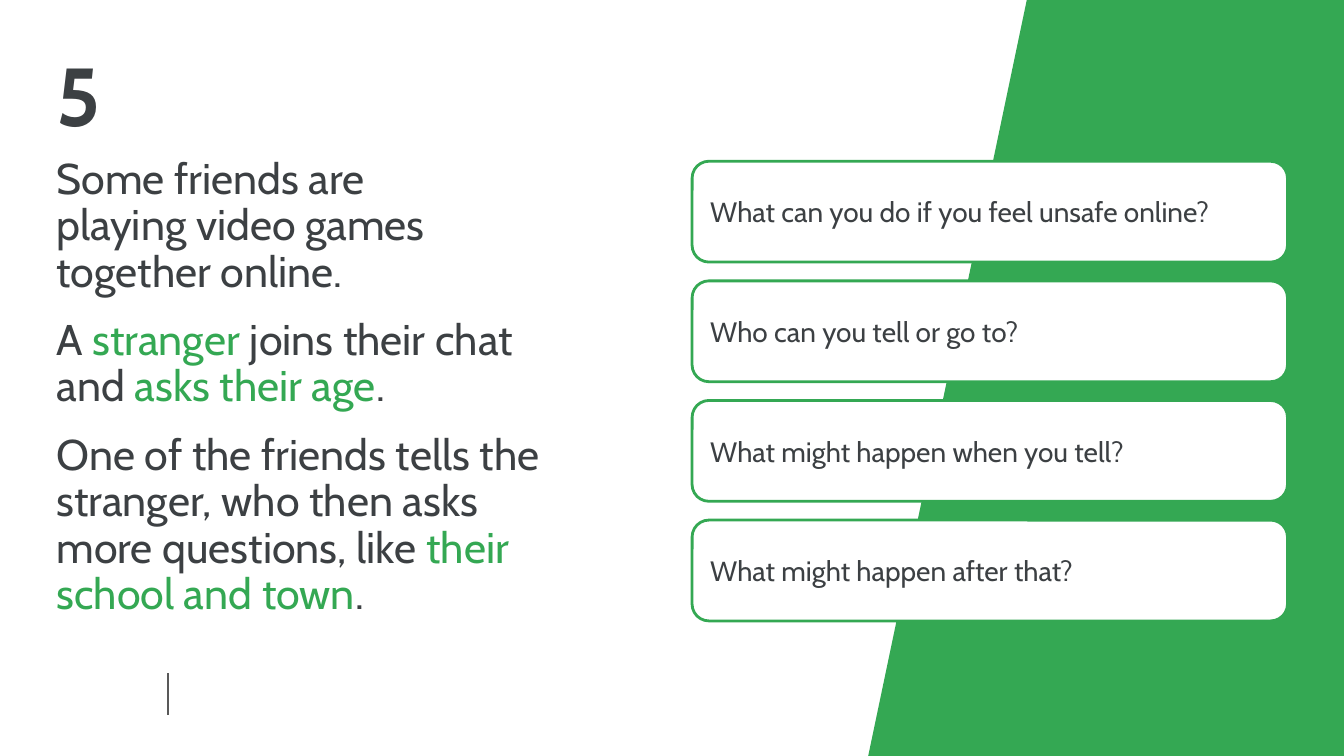
"""Builds a discussion slide: an online safety story beside four question cards."""
import pptx
import pptx.dml.color
import pptx.enum.shapes
import pptx.enum.text
import pptx.oxml
import pptx.oxml.ns
import pptx.util

Inches = pptx.util.Inches
Pt = pptx.util.Pt
RGBColor = pptx.dml.color.RGBColor

WIDTH = 10
HEIGHT = WIDTH * 9 / 16
LEFT = 0.42
CARD_LEFT, CARD_TOP, CARD_WIDTH, CARD_HEIGHT = 5.15, 1.2, 4.43, 0.75
CARD_PITCH = 0.89

FONT = "Cabin"
GREEN = RGBColor(0x34, 0xA8, 0x53)
INK = RGBColor(0x3C, 0x40, 0x43)
GREY = RGBColor(0x59, 0x59, 0x59)
WHITE = RGBColor(0xFF, 0xFF, 0xFF)

QUESTIONS = [
    "What can you do if you feel unsafe online?",
    "Who can you tell or go to?",
    "What might happen when you tell?",
    "What might happen after that?",
]
OPENING = [[("Some friends are \vplaying video games together online.", INK)]]
STORY = [
    [("A ", INK), ("stranger", GREEN), (" joins their chat and ", INK),
     ("asks their age", GREEN), (".", INK)],
    [("One of the friends tells the stranger, who then asks more questions, like ", INK),
     ("their school and town", GREEN), (".", INK)],
]


def add_run(p, text, size, color=INK, bold=False):
    """Add text to a paragraph, with a line break at each vertical tab."""
    for i, part in enumerate(text.split("\v")):
        if i:
            p.add_line_break()
        r = p.add_run()
        r.text = part
        r.font.name = FONT
        r.font.size = Pt(size)
        r.font.bold = bold
        r.font.color.rgb = color


def set_frame(tf, margin, anchor):
    """Wrap a text frame and set its margins and anchor."""
    tf.word_wrap = True
    tf.vertical_anchor = anchor
    tf.margin_left = tf.margin_right = Inches(margin)
    tf.margin_top = tf.margin_bottom = Inches(margin)


def add_text(s, top, width, height, paragraphs, size, bold=False):
    """Add a text box at the left margin, with coloured runs."""
    sp = s.shapes.add_textbox(Inches(LEFT), Inches(top), Inches(width), Inches(height))
    tf = sp.text_frame
    set_frame(tf, 0, pptx.enum.text.MSO_ANCHOR.TOP)
    for i, runs in enumerate(paragraphs):
        p = tf.add_paragraph() if i else tf.paragraphs[0]
        p.line_spacing = 0.9
        p.space_before = Pt(12 if i else 0)
        for text, color in runs:
            add_run(p, text, size, color, bold)


def add_card(s, row, question):
    """Add one rounded question card in its row."""
    sp = s.shapes.add_shape(
        pptx.enum.shapes.MSO_SHAPE.ROUNDED_RECTANGLE,
        Inches(CARD_LEFT), Inches(CARD_TOP + row * CARD_PITCH),
        Inches(CARD_WIDTH), Inches(CARD_HEIGHT))
    sp.shadow.inherit = False
    sp.fill.solid()
    sp.fill.fore_color.rgb = WHITE
    sp.line.color.rgb = GREEN
    sp.line.width = Pt(1.5)
    set_frame(sp.text_frame, 0.1, pptx.enum.text.MSO_ANCHOR.MIDDLE)
    p = sp.text_frame.paragraphs[0]
    p.alignment = pptx.enum.text.PP_ALIGN.LEFT
    add_run(p, question, 15)


def add_panel(s):
    """Add the slanted green panel along the right edge."""
    corners = [(WIDTH + 0.01, HEIGHT), (6.46, HEIGHT), (7.64, 0), (WIDTH, 0)]
    points = [(Inches(x), Inches(y)) for x, y in corners]
    builder = s.shapes.build_freeform(*points[0])
    builder.add_line_segments(points[1:], close=True)
    sp = builder.convert_to_shape()
    sp.shadow.inherit = False
    sp.fill.solid()
    sp.fill.fore_color.rgb = GREEN
    sp.line.fill.background()


def add_divider(s, x, top, bottom):
    """Add the thin vertical footer line."""
    cxn = s.shapes.add_connector(
        pptx.enum.shapes.MSO_CONNECTOR.STRAIGHT,
        Inches(x), Inches(top), Inches(x), Inches(bottom))
    cxn.line.color.rgb = GREY
    cxn.line.width = Pt(0.75)
    effects = pptx.oxml.parse_xml("<a:effectLst %s/>" % pptx.oxml.ns.nsdecls("a"))
    cxn._element.spPr.append(effects)


def main():
    """Build and save the slide."""
    prs = pptx.Presentation()
    prs.slide_width, prs.slide_height = Inches(WIDTH), Inches(HEIGHT)
    s = prs.slides.add_slide(prs.slide_layouts[6])
    add_divider(s, WIDTH / 8, 5.01, 5.32)
    add_panel(s)
    add_text(s, 0.41, 6.04, 0.75, [[("5", INK)]], 44, bold=True)
    add_text(s, 1.17, 3.79, 1.05, OPENING, 23)
    for row, question in enumerate(QUESTIONS):
        add_card(s, row, question)
    add_text(s, 2.37, 3.79, 2.26, STORY, 23)
    prs.save("out.pptx")


if __name__ == "__main__":
    main()
